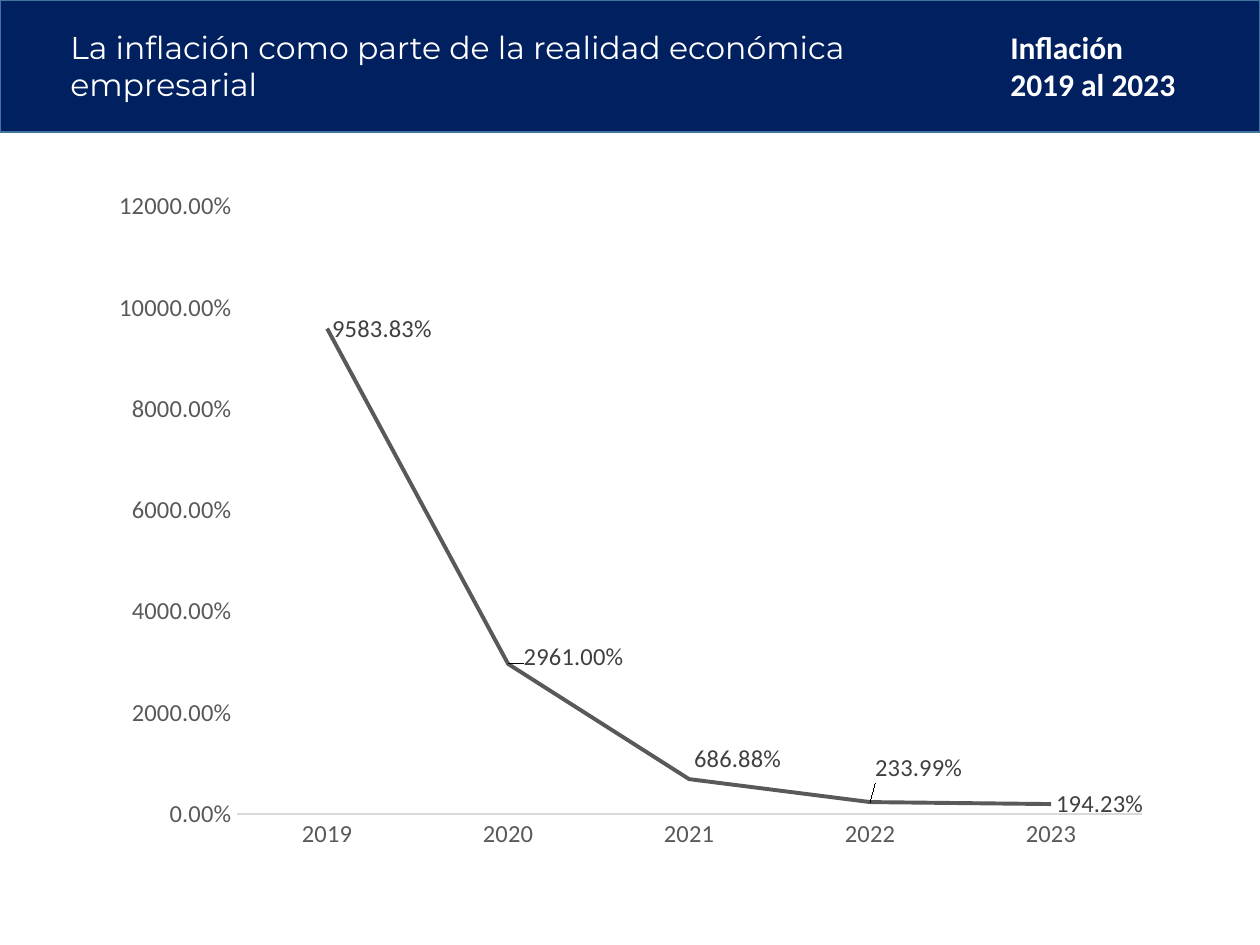
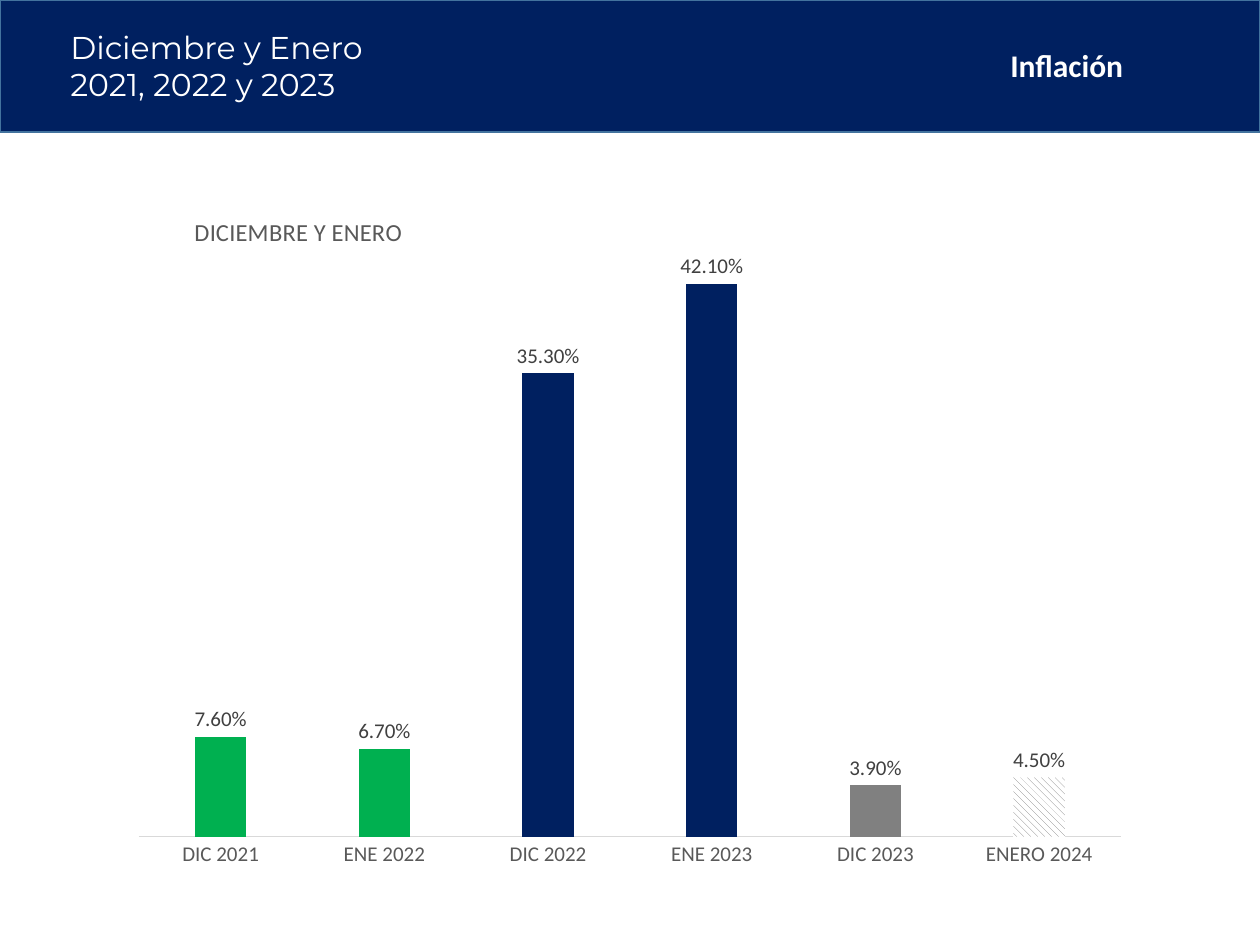
from pptx import Presentation
from pptx.chart.data import CategoryChartData as ChartData
from pptx.dml.color import RGBColor as RGB
from pptx.enum.chart import XL_CHART_TYPE as Kind, XL_LABEL_POSITION as Spot
from pptx.enum.chart import XL_TICK_MARK as Tick
from pptx.enum.dml import MSO_PATTERN as Pattern
from pptx.enum.shapes import MSO_SHAPE as Shape
from pptx.enum.text import MSO_AUTO_SIZE as Fit
from pptx.oxml import parse_xml
from pptx.oxml.ns import nsdecls, qn
from pptx.util import Inches, Pt

# Shared look
NAVY = RGB(0x00, 0x20, 0x60)
EDGE = RGB(0x43, 0x73, 0x9E)
GREEN = RGB(0x00, 0xB0, 0x50)
GRAY = RGB(0x80, 0x80, 0x80)
TEXT = RGB(0x59, 0x59, 0x59)
LABEL = RGB(0x40, 0x40, 0x40)
RULE = RGB(0xD9, 0xD9, 0xD9)
WHITE = RGB(0xFF, 0xFF, 0xFF)
BODY, HEAD = "Calibri", "Montserrat"
PERCENT = "0.00%"

# Content
YEARS = {
    "title": ["La inflación como parte de la realidad económica empresarial"],
    "topic": "Inflación 2019 al 2023",
    "topic_box": (7.92, 0.17, 1.62, 0.71),
    "kind": Kind.LINE,
    "box": (0.78, 1.42, 8.45, 5.42),
    "plot": (0.13, 0.04, 0.85, 0.89),
    "size": 14,
    "top": 120,
    "data": [("2019", 95.8383), ("2020", 29.61), ("2021", 6.8688),
             ("2022", 2.3399), ("2023", 1.9423)],
}
MONTHS = {
    "title": ["Diciembre y Enero", "2021, 2022 y 2023"],
    "topic": "Inflación",
    "topic_box": (7.92, 0.32, 1.62, 0.4),
    "kind": Kind.COLUMN_CLUSTERED,
    "box": (0.94, 1.33, 8.12, 5.65),
    "plot": (0.02, 0.11, 0.96, 0.83),
    "size": 12,
    "top": 0.45,
    "data": [("DIC 2021", 0.076), ("ENE 2022", 0.067), ("DIC 2022", 0.353),
             ("ENE 2023", 0.421), ("DIC 2023", 0.039), ("ENERO 2024", 0.045)],
}
SHIFTS = {1: (0.01, -0.01), 2: (0, -0.03), 3: (0, -0.05)}  # label offsets
BARS = [GREEN, GREEN, NAVY, NAVY, GRAY]  # the last bar is hatched


def style(font, size, color, name=BODY, bold=False):
    font.size, font.name, font.bold = Pt(size), name, bold
    font.color.rgb = color


def add_text(slide, box, lines, name, bold=False):
    frame = slide.shapes.add_textbox(*map(Inches, box)).text_frame
    frame.word_wrap = True
    frame.auto_size = Fit.SHAPE_TO_FIT_TEXT
    for i, line in enumerate(lines):
        para = frame.add_paragraph() if i else frame.paragraphs[0]
        run = para.add_run()
        run.text = line
        style(run.font, 18, WHITE, name, bold)


def add_band(slide, page):
    band = slide.shapes.add_shape(Shape.RECTANGLE, 0, 0, Inches(10), Inches(1.05))
    band.shadow.inherit = False
    band.fill.solid()
    band.fill.fore_color.rgb = NAVY
    band.line.color.rgb = EDGE
    band.line.width = Pt(1)
    add_text(slide, page["topic_box"], [page["topic"]], BODY, True)
    add_text(slide, (0.46, 0.17, 6.36, 0.71), page["title"], HEAD)


def set_layout(node, index, place, inner=False):
    """Place a chart part by fractions of the chart: x, y and maybe w, h."""
    old = node.find(qn("c:layout"))
    if old is not None:
        node.remove(old)
    tags = '<c:layoutTarget val="inner"/>' if inner else ""
    if len(place) == 4 or index == 1 and node.tag == qn("c:title"):
        tags += '<c:xMode val="edge"/><c:yMode val="edge"/>'
    tags += "".join(f'<c:{k} val="{v}"/>' for k, v in zip("xywh", place))
    node.insert(index, parse_xml(
        f'<c:layout {nsdecls("c")}><c:manualLayout>{tags}</c:manualLayout></c:layout>'))


def add_chart(slide, page):
    data = ChartData(number_format=PERCENT)
    names, values = zip(*page["data"])
    data.categories = names
    data.add_series("Inflación", values)
    chart = slide.shapes.add_chart(
        page["kind"], *map(Inches, page["box"]), data).chart
    chart.has_legend = chart.has_title = False
    style(chart.font, page["size"], TEXT)
    set_layout(chart._chartSpace.chart.plotArea, 0, page["plot"], True)

    # Axes
    for axis in (chart.category_axis, chart.value_axis):
        axis.has_major_gridlines = False
        axis.major_tick_mark = axis.minor_tick_mark = Tick.NONE
        style(axis.tick_labels.font, page["size"], TEXT)
    line = chart.category_axis.format.line
    line.color.rgb, line.width = RULE, Pt(0.75)
    scale = chart.value_axis
    scale.minimum_scale, scale.maximum_scale = 0, page["top"]
    scale.format.line.fill.background()
    scale.tick_labels.number_format = PERCENT
    scale.tick_labels.number_format_is_linked = False

    # Values
    plot = chart.plots[0]
    plot.vary_by_categories = False
    series = plot.series[0]
    labels = series.data_labels
    labels.show_value = True
    labels.number_format = PERCENT
    labels.number_format_is_linked = False
    style(labels.font, page["size"], LABEL)
    return chart, series, labels


def draw_years(chart, series, labels):
    chart.value_axis.major_unit = 20
    series.smooth = False
    series.format.line.color.rgb = TEXT
    series.format.line.width = Pt(2.25)
    labels.position = Spot.RIGHT
    for i, shift in SHIFTS.items():
        label = series.points[i].data_label
        style(label.font, 14, LABEL)
        label.position = Spot.RIGHT
        set_layout(label._dLbl, 1, shift)


def draw_months(chart, series, labels):
    chart.value_axis.visible = False
    plot = chart.plots[0]
    plot.gap_width, plot.overlap = 219, -27
    labels.position = Spot.OUTSIDE_END
    for i, color in enumerate(BARS):
        fill = series.points[i].format.fill
        fill.solid()
        fill.fore_color.rgb = color
    hatch = series.points[len(BARS)].format.fill
    hatch.patterned()
    hatch.pattern = Pattern.WIDE_DOWNWARD_DIAGONAL
    hatch.fore_color.rgb, hatch.back_color.rgb = GRAY, WHITE

    # Chart title
    chart.has_title = True
    title = chart.chart_title
    run = title.text_frame.paragraphs[0].add_run()
    run.text = "DICIEMBRE Y ENERO"
    style(run.font, 14, TEXT)
    set_layout(title._element, 1, (0.07, 0.06))


def main():
    deck = Presentation()
    deck.slide_width, deck.slide_height = Inches(10), Inches(7.5)
    for page, draw in ((YEARS, draw_years), (MONTHS, draw_months)):
        slide = deck.slides.add_slide(deck.slide_layouts[6])
        add_band(slide, page)
        draw(*add_chart(slide, page))
    deck.save("out.pptx")


if __name__ == "__main__":
    main()
